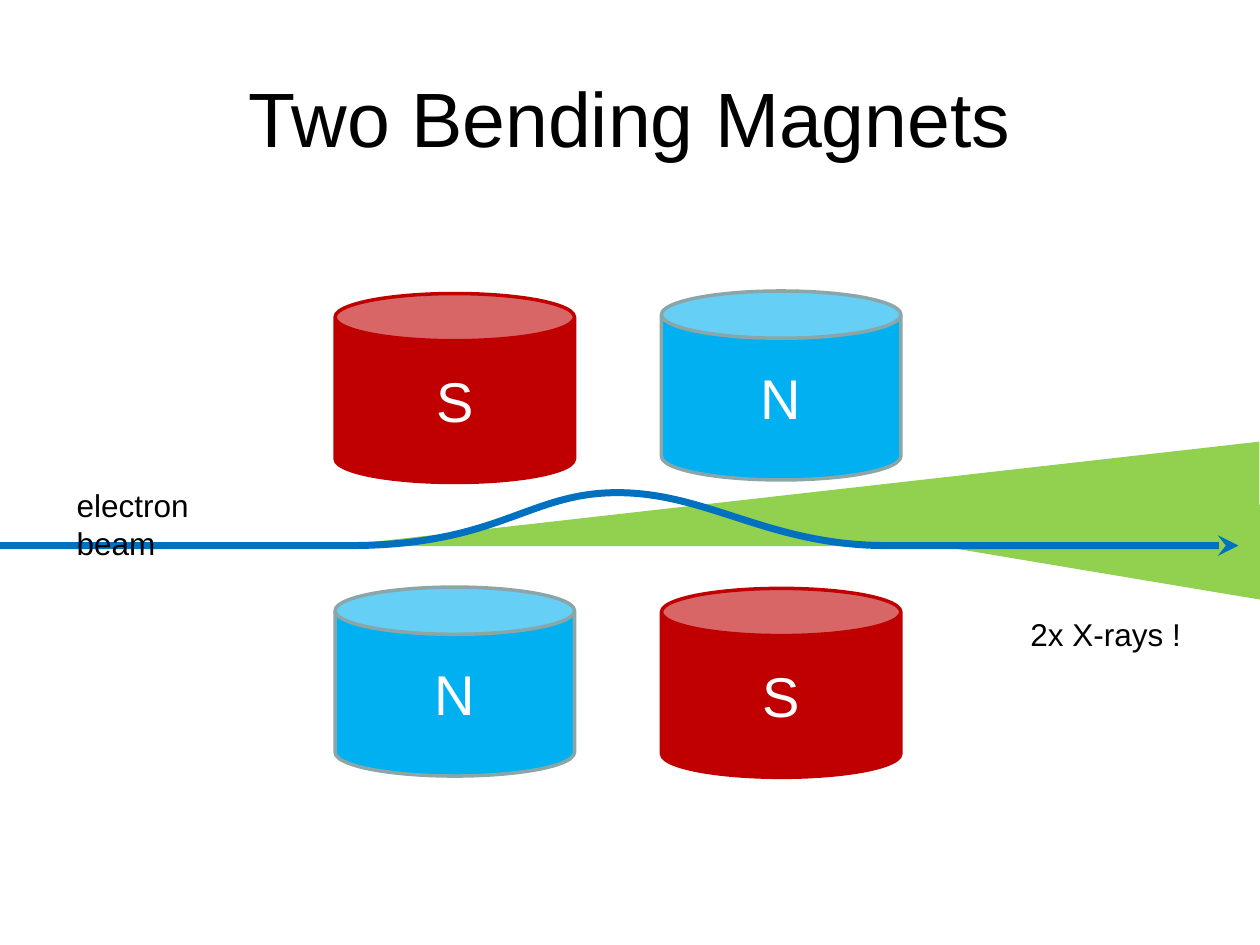
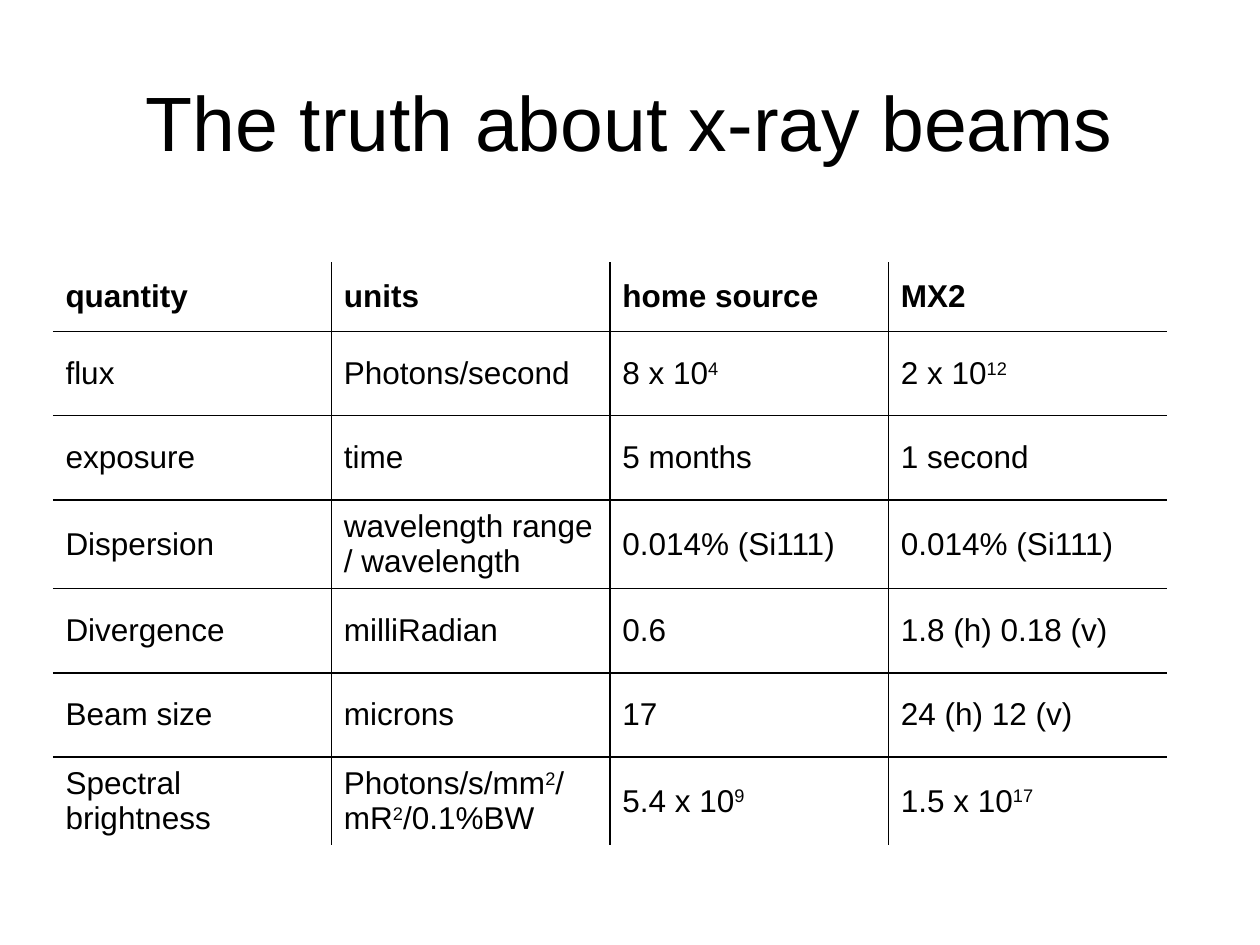
from typing import NamedTuple

from lxml.etree import SubElement
from pptx import Presentation
from pptx.dml.color import RGBColor
from pptx.enum.shapes import MSO_SHAPE as Shape
from pptx.enum.text import MSO_ANCHOR as Anchor, PP_ALIGN as Align
from pptx.oxml.ns import qn
from pptx.util import Inches, Pt

BLACK = RGBColor(0x00, 0x00, 0x00)
WHITE = RGBColor(0xFF, 0xFF, 0xFF)
RED = RGBColor(0xC0, 0x00, 0x00)
SKY = RGBColor(0x00, 0xB0, 0xF0)
GREY = RGBColor(0x8A, 0xA6, 0xA8)
GREEN = RGBColor(0x92, 0xD0, 0x50)
BLUE = RGBColor(0x00, 0x70, 0xC0)
FONT = "Arial"


class Box(NamedTuple):
    left: float
    top: float
    width: float
    height: float

    def inches(self) -> list:
        return [Inches(v) for v in self]


class Pole(NamedTuple):
    letter: str
    fill: RGBColor
    line: RGBColor


class Magnet(NamedTuple):
    pole: Pole
    left: float
    top: float


class Wedge(NamedTuple):
    box: Box
    rotation: int
    flipped: bool


class Label(NamedTuple):
    text: str
    box: Box


NORTH = Pole("N", SKY, GREY)
SOUTH = Pole("S", RED, RED)
MAGNETS = [
    Magnet(SOUTH, 2.66, 2.33), Magnet(NORTH, 5.25, 2.31),
    Magnet(NORTH, 2.66, 4.66), Magnet(SOUTH, 5.25, 4.67),
]
XRAY_WEDGES = [
    Wedge(Box(7.56, 1.94, 0.83, 4.96), 90, True),
    Wedge(Box(5.91, 0.25, 0.83, 7.34), 270, False),
]
LABELS = [
    Label("electron beam", Box(0.51, 3.81, 1.37, 0.4)),
    Label("2x X-rays !", Box(8.08, 4.83, 1.41, 0.4)),
]

# Beam: a straight run, two Bezier curves (three points each), a straight run
BEAM_Y, CREST_Y = 4.33, 3.91
BEAM_POINTS = [
    (-0.77, BEAM_Y), (2.77, BEAM_Y),
    (3.96, BEAM_Y), (4.19, CREST_Y), (4.9, CREST_Y),
    (5.62, CREST_Y), (6.1, BEAM_Y), (7.04, BEAM_Y),
    (9.83, BEAM_Y),
]
CURVE_STARTS = (2, 5)

# Text between carets is superscript
BEAM_ROWS = [
    ["quantity", "units", "home source", "MX2"],
    ["flux", "Photons/second", "8 x 10^4^", "2 x 10^12^"],
    ["exposure", "time", "5 months", "1 second"],
    ["Dispersion", "wavelength range / wavelength", "0.014% (Si111)", "0.014% (Si111)"],
    ["Divergence", "milliRadian", "0.6", "1.8 (h) 0.18 (v)"],
    ["Beam size", "microns", "17", "24 (h) 12 (v)"],
    ["Spectral\nbrightness", "Photons/s/mm^2^/\nmR^2^/0.1%BW", "5.4 x 10^9^", "1.5 x 10^17^"],
]
TABLE_LEFT, TABLE_TOP = 0.42, 2.08
COL_WIDTH, HEADER_HEIGHT, ROW_HEIGHT = 2.21, 0.55, 0.67


def write(tf, text: str, size: int, color: RGBColor = BLACK,
          align: Align = Align.LEFT, bold: bool = False) -> None:
    for i, line in enumerate(text.split("\n")):
        p = tf.add_paragraph() if i else tf.paragraphs[0]
        p.alignment = align
        for j, part in enumerate(line.split("^")):
            if not part:
                continue
            r = p.add_run()
            r.text = part
            r.font.name, r.font.size, r.font.bold = FONT, Pt(size), bold
            r.font.color.rgb = color
            if j % 2:
                r.font._element.set("baseline", "30000")


def add_text(s, text: str, box: Box, size: int = 18,
             align: Align = Align.LEFT, anchor: Anchor = Anchor.TOP) -> None:
    tf = s.shapes.add_textbox(*box.inches()).text_frame
    tf.word_wrap = True
    tf.vertical_anchor = anchor
    write(tf, text, size, align=align)


def add_title(s, text: str, box: Box) -> None:
    add_text(s, text, box, 44, Align.CENTER, Anchor.MIDDLE)


def add_wedge(s, wedge: Wedge) -> None:
    sp = s.shapes.add_shape(Shape.ISOSCELES_TRIANGLE, *wedge.box.inches())
    sp.shadow.inherit = False
    sp.adjustments[0] = 0
    sp.rotation = wedge.rotation
    sp.fill.solid()
    sp.fill.fore_color.rgb = GREEN
    sp.line.fill.background()
    if wedge.flipped:
        sp._element.spPr.find(qn("a:xfrm")).set("flipV", "1")


def add_magnet(s, magnet: Magnet) -> None:
    box = Box(magnet.left, magnet.top, 1.9, 1.5)
    sp = s.shapes.add_shape(Shape.CAN, *box.inches())
    sp.shadow.inherit = False
    sp.fill.solid()
    sp.fill.fore_color.rgb = magnet.pole.fill
    sp.line.color.rgb = magnet.pole.line
    sp.line.width = Pt(2)
    sp.text_frame.vertical_anchor = Anchor.MIDDLE
    write(sp.text_frame, magnet.pole.letter, 32, WHITE, Align.CENTER)


def add_beam(s) -> None:
    points = [(Inches(x), Inches(y)) for x, y in BEAM_POINTS]
    builder = s.shapes.build_freeform(*points[0])
    builder.add_line_segments(points[1:], close=False)
    sp = builder.convert_to_shape()
    sp.shadow.inherit = False
    sp.fill.background()
    sp.line.color.rgb = BLUE
    sp.line.width = Pt(4)
    SubElement(sp.line._get_or_add_ln(), qn("a:tailEnd"), type="stealth")
    # Merge each curve's three line segments into one cubic segment
    outline = next(sp._element.iter(qn("a:path")))
    segments = list(outline)
    for start in CURVE_STARTS:
        curve = outline.makeelement(qn("a:cubicBezTo"))
        segments[start].addprevious(curve)
        for segment in segments[start:start + 3]:
            curve.append(segment[0])
            outline.remove(segment)


def set_borders(cell, sides: dict[str, bool]) -> None:
    tc_pr = cell._tc.get_or_add_tcPr()
    for side, visible in sides.items():
        ln = SubElement(tc_pr, qn(f"a:ln{side}"), w=str(Pt(1)))
        if visible:
            fill = SubElement(ln, qn("a:solidFill"))
            SubElement(fill, qn("a:srgbClr"), val=str(BLACK))
        else:
            SubElement(ln, qn("a:noFill"))


def add_beam_table(s) -> None:
    n_rows, n_cols = len(BEAM_ROWS), len(BEAM_ROWS[0])
    box = Box(TABLE_LEFT, TABLE_TOP, n_cols * COL_WIDTH,
              HEADER_HEIGHT + (n_rows - 1) * ROW_HEIGHT)
    table = s.shapes.add_table(n_rows, n_cols, *box.inches()).table
    table.first_row = table.horz_banding = False
    for col in table.columns:
        col.width = Inches(COL_WIDTH)
    for i, texts in enumerate(BEAM_ROWS):
        table.rows[i].height = Inches(ROW_HEIGHT if i else HEADER_HEIGHT)
        for j, text in enumerate(texts):
            cell = table.cell(i, j)
            # Rules run between cells only, not around the table
            set_borders(cell, {"L": j > 0, "R": j < n_cols - 1,
                               "T": i > 0, "B": i < n_rows - 1})
            cell.fill.solid()
            cell.fill.fore_color.rgb = WHITE
            cell.vertical_anchor = Anchor.MIDDLE
            write(cell.text_frame, text, 18, bold=i == 0)


def build_magnets_slide(s) -> None:
    add_title(s, "Two Bending Magnets", Box(0.5, 0.3, 9, 1.25))
    for wedge in XRAY_WEDGES:
        add_wedge(s, wedge)
    add_beam(s)
    for magnet in MAGNETS:
        add_magnet(s, magnet)
    for label in LABELS:
        add_text(s, label.text, label.box)


def build_truth_slide(s) -> None:
    add_title(s, "The truth about x-ray beams", Box(0, 0, 10, 1.92))
    add_beam_table(s)


def main() -> None:
    prs = Presentation()
    prs.slide_width, prs.slide_height = Inches(10), Inches(7.5)
    blank = prs.slide_layouts[6]
    for build in (build_magnets_slide, build_truth_slide):
        build(prs.slides.add_slide(blank))
    prs.save("out.pptx")


if __name__ == "__main__":
    main()
